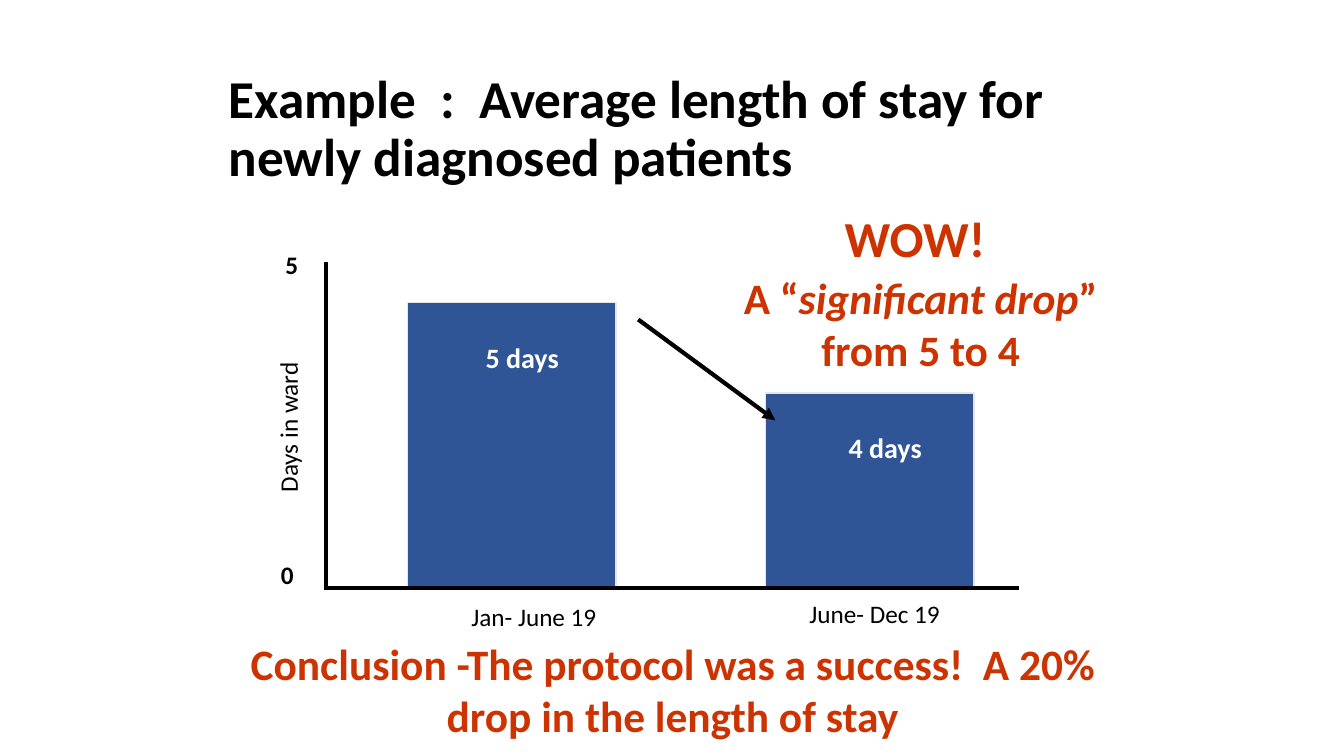
from pptx import Presentation
from pptx.dml.color import RGBColor
from pptx.enum.shapes import MSO_CONNECTOR, MSO_SHAPE
from pptx.enum.text import MSO_ANCHOR, PP_ALIGN
from pptx.oxml.ns import qn
from pptx.util import Inches, Pt
from lxml.etree import SubElement

CELL = 0.1  # side of one grid cell in inches; lengths below are columns and rows
BLACK, WHITE, RED, BLUE, PALE = "000000", "FFFFFF", "CC3300", "2F5597", "E7E6E6"


def grid(*cells):
    return [Inches(cell * CELL) for cell in cells]


def color(value):
    return RGBColor.from_string(value)


def apply(target, values):
    for name, value in values.items():
        setattr(target, name, value)


class StaySlide:
    font = "Calibri"

    def __init__(self, deck):
        self.shapes = deck.slides.add_slide(deck.slide_layouts[6]).shapes

    def text(self, place, lines, size, ink=BLACK, bold=True, rotation=0,
             anchor=MSO_ANCHOR.TOP, **paragraph_format):
        """Each line is a list of (words, format) runs, or a plain string."""
        box = self.shapes.add_textbox(*grid(*place))
        box.rotation = rotation
        frame = box.text_frame
        apply(frame, {"word_wrap": True, "vertical_anchor": anchor})
        for number, line in enumerate(lines):
            paragraph = frame.add_paragraph() if number else frame.paragraphs[0]
            apply(paragraph, {"alignment": PP_ALIGN.CENTER, **paragraph_format})
            if number:
                apply(paragraph, {"line_spacing": 0.6, "space_before": Pt(15)})
            for words, changes in [(line, {})] if isinstance(line, str) else line:
                run = paragraph.add_run()
                run.text = words
                apply(run.font, {"name": self.font, "size": Pt(size),
                                 "bold": bold, **changes})
                run.font.color.rgb = color(ink)

    def bar(self, *place):
        column = self.shapes.add_shape(MSO_SHAPE.RECTANGLE, *grid(*place))
        column.shadow.inherit = False
        column.fill.solid()
        column.fill.fore_color.rgb = color(BLUE)
        column.line.color.rgb = color(PALE)
        column.line.width = Pt(1)

    def line(self, *ends, arrow=False):
        stroke = self.shapes.add_connector(MSO_CONNECTOR.STRAIGHT, *grid(*ends))
        stroke.line.color.rgb = color(BLACK)
        stroke.line.width = Pt(3)
        if arrow:
            SubElement(stroke.line._get_or_add_ln(), qn("a:tailEnd"), type="triangle")
        SubElement(stroke._element.spPr, qn("a:effectLst"))


def main():
    deck = Presentation()
    apply(deck, {"slide_width": Inches(13.33), "slide_height": Inches(7.5)})
    slide = StaySlide(deck)

    # Title
    slide.text((21.7, 5.8, 90.1, 14.2),
               ["Example  :  Average length of stay for newly diagnosed patients"], 38,
               anchor=MSO_ANCHOR.MIDDLE, alignment=PP_ALIGN.LEFT, line_spacing=0.9)

    # Vertical axis with its name and scale
    baseline = 58.3
    slide.line(32.3, 26, 32.3, 58.5)
    slide.text((14.3, 40.4, 28.5, 4), ["Days in ward"], 18, bold=False, rotation=270)
    slide.text((24.8, 55, 7.4, 4), ["0"], 18)
    slide.text((25.6, 24.2, 6.7, 4), ["5"], 18)

    # Bars: left, top, value and its place, period and its place
    periods = [
        (40.4, 30, "5 days", (47, 33.3), "Jan- June 19", (44.8, 59.2)),
        (75.9, 39, "4 days ", (83, 42.2), "June- Dec 19", (78.6, 58.9)),
    ]
    for left, top, days, days_at, period, period_at in periods:
        slide.bar(left, top, 20.7, baseline - top)
        slide.text((*days_at, 9.6, 4.3), [days], 20, WHITE)
        slide.text((*period_at, 16.3, 4), [period], 18, bold=False)

    # Claimed drop
    claim = [
        [("WOW! ", {"size": Pt(36)})],
        [("A “", {}), ("significant drop", {"italic": True}), ("”", {})],
        "from 5 to 4",
    ]
    slide.text((69.2, 20.1, 44.2, 18.9), claim, 31, RED)
    slide.line(63.3, 31.7, 76.9, 41.7, arrow=True)

    # Conclusion
    slide.text((19.2, 62.7, 95, 11.4),
               ["Conclusion -The protocol was a success!  A 20% drop in the length of stay"],
               31, RED)

    # Horizontal axis, over the feet of the bars
    slide.line(32.2, baseline, 101.1, baseline)

    deck.save("out.pptx")


if __name__ == "__main__":
    main()
